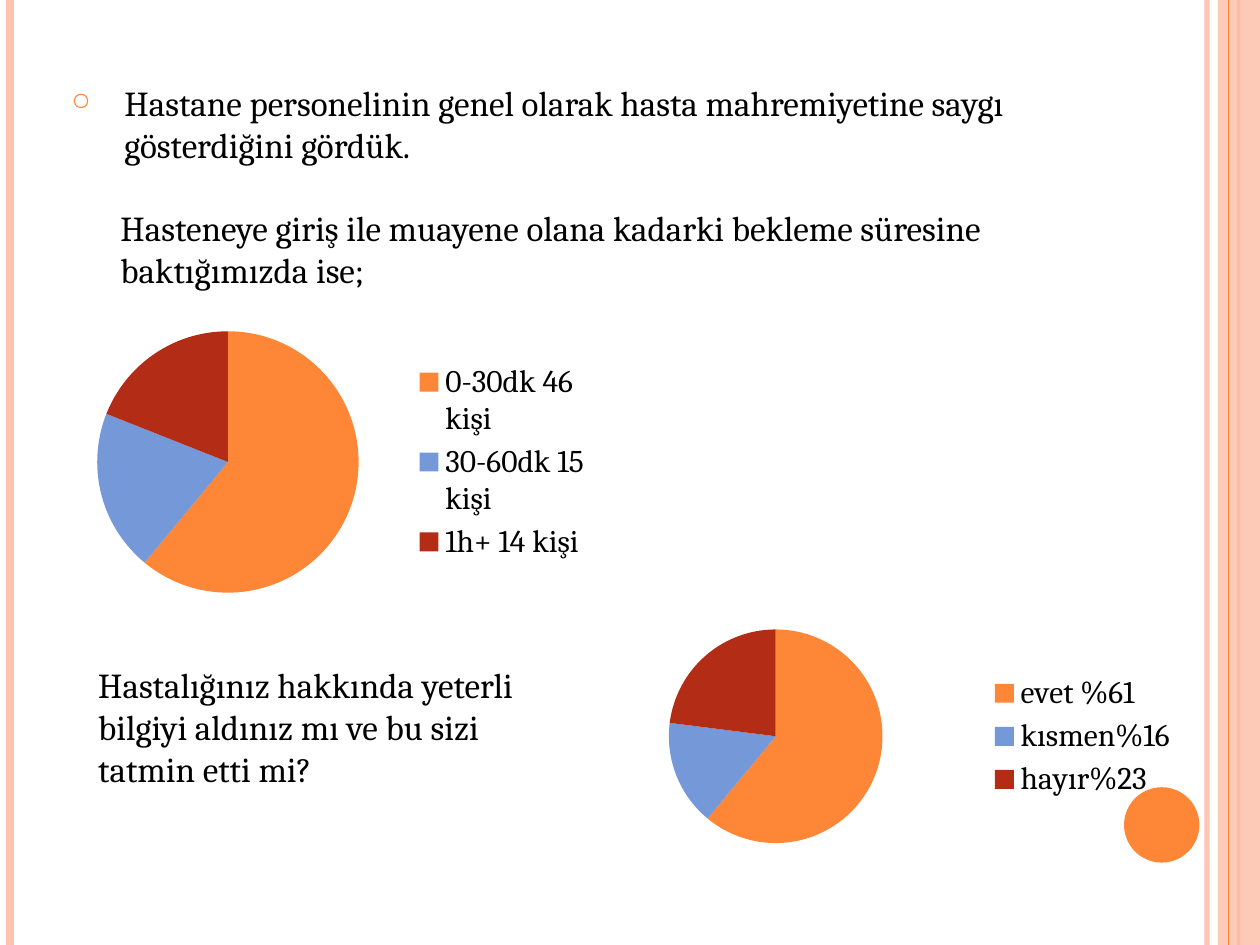
from lxml import etree
from pptx import Presentation
from pptx.chart.data import CategoryChartData
from pptx.dml.color import RGBColor
from pptx.enum.chart import XL_CHART_TYPE, XL_LEGEND_POSITION
from pptx.enum.shapes import MSO_CONNECTOR, MSO_SHAPE
from pptx.oxml.ns import qn
from pptx.util import Cm, Pt

PIE = XL_CHART_TYPE.PIE
RIGHT = XL_LEGEND_POSITION.RIGHT
LINE = MSO_CONNECTOR.STRAIGHT
RECT, OVAL = MSO_SHAPE.RECTANGLE, MSO_SHAPE.OVAL

WIDE, HIGH = 25.4, 19.05
FONT = "Cambria"
ORANGE, BLUE, RED, PINK = "FE8637", "7598D9", "B32C16", "FEC3AE"


def color(code):
    return RGBColor.from_string(code)


def sub(node, tag, **attrs):
    return etree.SubElement(node, qn(tag), **attrs)


def fade(fill, part):
    """Set the opacity of a solid fill in percent."""
    node = fill._xPr.find(".//" + qn("a:srgbClr"))
    sub(node, "a:alpha", val=str(part * 1000))


def text(slide, box, words, size=20, ink="000000", bullet=None):
    frame = slide.shapes.add_textbox(*map(Cm, box)).text_frame
    frame.word_wrap = True
    para = frame.paragraphs[0]
    run = para.add_run()
    run.text = words
    run.font.name, run.font.size = FONT, Pt(size)
    run.font.color.rgb = color(ink)
    if bullet:
        para.space_before = Pt(6)
        props = para._p.get_or_add_pPr()
        props.set("marL", str(Cm(1.17)))
        props.set("indent", str(-Cm(1.07)))
        sub(sub(props, "a:buClr"), "a:srgbClr", val=ORANGE)
        sub(props, "a:buSzPct", val="70000")
        sub(props, "a:buChar", char=bullet)


def rule(slide, x, top, height, ink, width, part=100):
    line = slide.shapes.add_connector(
        LINE, Cm(x), Cm(top), Cm(x), Cm(top + height))
    line.line.width = Pt(width)
    line.line.color.rgb = color(ink)
    sub(line._element.spPr, "a:effectLst")
    if part < 100:
        fade(line.line.fill, part)


def solid(slide, kind, box, ink, part=100):
    shape = slide.shapes.add_shape(kind, *map(Cm, box))
    shape.shadow.inherit = False
    shape.fill.solid()
    shape.fill.fore_color.rgb = color(ink)
    shape.line.fill.background()
    if part < 100:
        fade(shape.fill, part)


def frame(slide, box):
    """Stripes along both sides, and the disc at lower right."""
    left, top, width, height = box
    right = left + width
    rule(slide, right - 1.07, top, height, PINK, 3, 93)
    rule(slide, left + 0.21, top, height, PINK, 4.5)
    rule(slide, right - 0.43, top, height, ORANGE, 1.5)
    solid(slide, RECT, (right - 0.85, top, 0.85, height), PINK, 87)
    rule(slide, right - 0.64, top, height, ORANGE, 0.75)
    solid(slide, OVAL, (right - 2.74, top + 15.87, 1.52, 1.52), ORANGE)


def pie(slide, box, cats, vals, plot):
    """Pie with legend; plot is its area as fractions of the box."""
    data = CategoryChartData()
    data.categories = cats
    data.add_series("Series 1", vals)
    chart = slide.shapes.add_chart(PIE, *map(Cm, box), data).chart
    chart.has_title = False
    chart.font.name, chart.font.size = FONT, Pt(18)
    chart.font.color.rgb = color("000000")
    chart.has_legend = True
    chart.legend.position = RIGHT
    chart.legend.include_in_layout = False
    chart.plots[0].vary_by_categories = True
    points = chart.plots[0].series[0].points
    for i, ink in enumerate((ORANGE, BLUE, RED)):
        fill = points[i].format.fill
        fill.solid()
        fill.fore_color.rgb = color(ink)

    # Fixed plot area
    area = chart._chartSpace.find(".//" + qn("c:plotArea"))
    for old in area.findall(qn("c:layout")):
        area.remove(old)
    layout = etree.Element(qn("c:layout"))
    area.insert(0, layout)
    manual = sub(layout, "c:manualLayout")
    sub(manual, "c:layoutTarget", val="inner")
    for mode in ("xMode", "yMode"):
        sub(manual, "c:" + mode, val="edge")
    for key, part in zip("xywh", plot):
        sub(manual, "c:" + key, val=str(part))


def intro(slide, box):
    """Finding and lead-in at the top."""
    left, top, width, height = box
    text(slide, (left, top, width, 4.04),
         "Hastane personelinin genel olarak hasta mahremiyetine saygı "
         "gösterdiğini gördük.", bullet="○")
    text(slide, (left + 1.09, top + 2.52, 20.4, height - 2.52),
         "Hasteneye giriş ile muayene olana kadarki bekleme süresine "
         "baktığımızda ise;")


def wait(slide, box):
    """Waiting times."""
    pie(slide, box, ("0-30dk 46 kişi", "30-60dk 15 kişi", "1h+ 14 kişi"),
        (61, 20, 19), (0.09, 0.06, 0.47, 0.88))


def survey(slide, box):
    """Question on the left, answers on the right."""
    left, top, width, height = box
    text(slide, (left, top + 0.94, 10, 3.68),
         "Hastalığınız hakkında yeterli bilgiyi aldınız mı ve bu sizi "
         "tatmin etti mi?")
    pie(slide, (left + 9.6, top, width - 9.6, height),
        ("evet %61", "kısmen%16", "hayır%23"),
        (61, 16, 23), (0.17, 0.07, 0.34, 0.86))


def main():
    deck = Presentation()
    deck.slide_width, deck.slide_height = Cm(WIDE), Cm(HIGH)
    slide = deck.slides.add_slide(deck.slide_layouts[6])
    frame(slide, (0, 0, WIDE, HIGH))
    intro(slide, (1.09, 1.52, 22.81, 5.34))
    wait(slide, (0.94, 6.32, 11.25, 5.99))
    survey(slide, (1.73, 12.32, 22.27, 5.05))
    deck.save("out.pptx")


if __name__ == "__main__":
    main()
